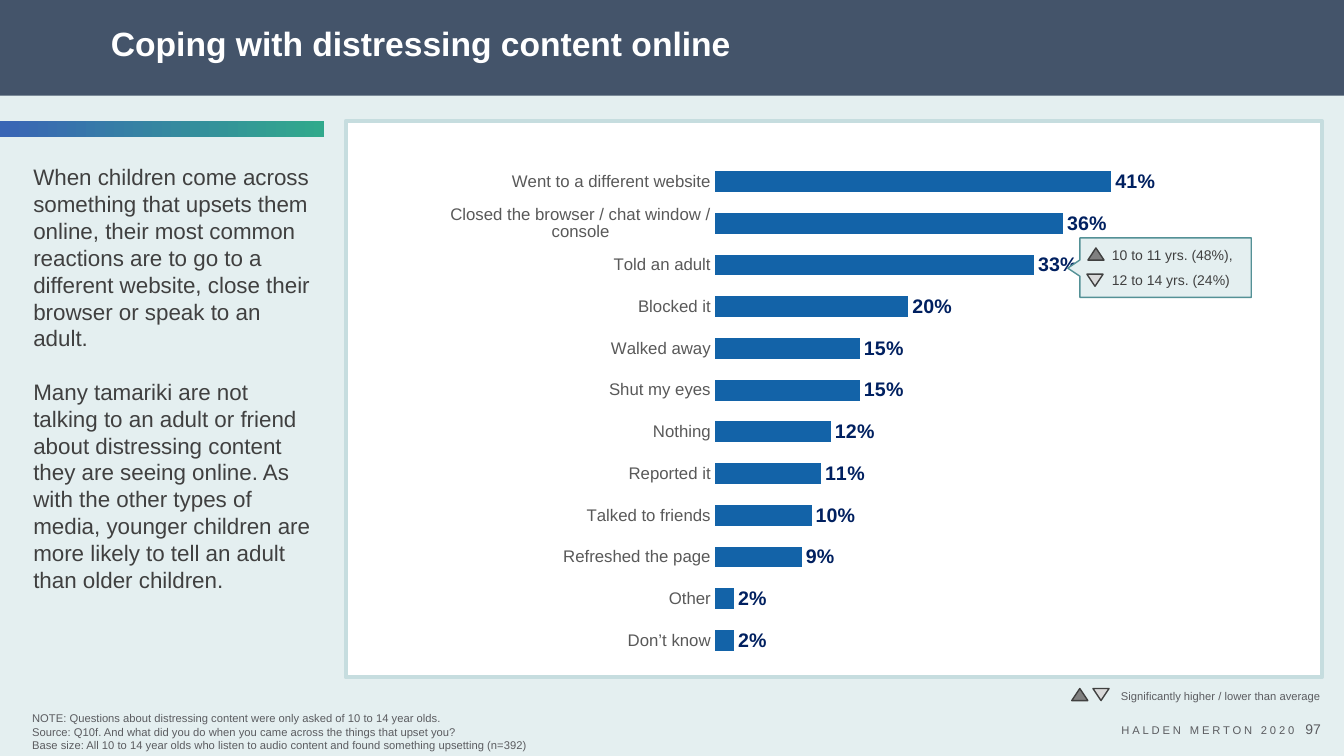
import dataclasses

import lxml.etree
import pptx
import pptx.chart.data
import pptx.dml.color
import pptx.enum.chart
import pptx.enum.shapes
import pptx.enum.text
import pptx.oxml
import pptx.oxml.ns
import pptx.util

Inches = pptx.util.Inches
Pt = pptx.util.Pt
Align = pptx.enum.text.PP_ALIGN
Anchor = pptx.enum.text.MSO_ANCHOR
Shape = pptx.enum.shapes.MSO_SHAPE
qn = pptx.oxml.ns.qn


@dataclasses.dataclass(frozen=True)
class Theme:
    """Colours, font and type sizes of the slide."""
    face: str = "Arial"
    white: str = "FFFFFF"
    black: str = "000000"
    pale: str = "E4EFF0"
    band: str = "44546A"
    frame: str = "C6DDDF"
    edge: str = "549196"
    start: str = "3965B5"
    end: str = "31A98C"
    bar: str = "1363A8"
    value: str = "002060"
    label: str = "595959"
    text: str = "404040"
    note: str = "5B5C60"
    higher: str = "808080"
    lower: str = "D9D9D9"
    head: int = 24
    body: int = 16
    mark: int = 14
    axis: int = 12
    small: int = 10
    tiny: int = 8


THEME = Theme()

BODY = [
    "When children come across something that upsets them online, their most common reactions "
    "are to go to a different website, close their browser or speak to an adult.",
    "Many tamariki are not talking to an adult or friend about distressing content they are "
    "seeing online. As with the other types of media, younger children are more likely to tell "
    "an adult than older children.",
]
NOTES = [
    "NOTE: Questions about distressing content were only asked of 10 to 14 year olds.",
    "Source: Q10f. And what did you do when you came across the things that upset you?",
    "Base size: All 10 to 14 year olds who listen to audio content and found something "
    "upsetting (n=392)",
]
SHARES = {
    "Went to a different website": 0.41,
    "Closed the browser / chat window / console": 0.36,
    "Told an adult": 0.33,
    "Blocked it": 0.2,
    "Walked away": 0.15,
    "Shut my eyes": 0.15,
    "Nothing": 0.12,
    "Reported it": 0.11,
    "Talked to friends": 0.1,
    "Refreshed the page": 0.09,
    "Other": 0.02,
    "Don’t know": 0.02,
}
PLOT = {"x": 0.355, "y": 0.038, "w": 0.501, "h": 0.925}


def rgb(code):
    """Turn a hex code into a colour."""
    return pptx.dml.color.RGBColor.from_string(code)


def style(font, size, color, bold=False):
    """Set the face, size, colour and weight of a font."""
    font.name, font.size, font.bold = THEME.face, Pt(size), bold
    font.color.rgb = rgb(color)


def place(shape, box):
    """Move and size a shape."""
    shape.left, shape.top, shape.width, shape.height = map(Inches, box)


def paint(shape, fill, line=None, width=1):
    """Give a shape a plain fill and an optional outline."""
    shape.shadow.inherit = False
    shape.fill.solid()
    shape.fill.fore_color.rgb = rgb(fill)
    if line:
        shape.line.color.rgb = rgb(line)
        shape.line.width = Pt(width)
    else:
        shape.line.fill.background()


def block(slide, box, fill, line=None, width=1, kind=Shape.RECTANGLE):
    """Draw a preset shape."""
    shape = slide.shapes.add_shape(kind, *map(Inches, box))
    paint(shape, fill, line, width)
    return shape


def arrow(slide, left, top, higher):
    """Draw a marker for a result above or below average."""
    fill = THEME.higher if higher else THEME.lower
    shape = block(slide, (left, top, 0.16, 0.12), fill, THEME.text,
                  kind=Shape.ISOSCELES_TRIANGLE)
    shape.rotation = 0 if higher else 180


def write(shape, lines, size, color, bold=False, align=Align.LEFT, anchor=Anchor.MIDDLE,
          space=1.0, before=0, after=0, indent=0):
    """Fill a text frame with paragraphs of one style."""
    frame = shape.text_frame
    frame.word_wrap = True
    frame.auto_size = pptx.enum.text.MSO_AUTO_SIZE.NONE
    frame.vertical_anchor = anchor
    frame.text = "\n".join(lines)
    for i, para in enumerate(frame.paragraphs):
        props = para._p.get_or_add_pPr()
        props.set("marL", str(Inches(indent)))
        props.set("indent", "0")
        lxml.etree.SubElement(props, qn("a:buNone"))
        para.alignment, para.line_spacing = align, space
        para.space_before, para.space_after = Pt(before if i else 0), Pt(after)
        style(para.font, size, color, bold)


def label(slide, box, lines, size, color, **look):
    """Add a text box."""
    shape = slide.shapes.add_textbox(*map(Inches, box))
    write(shape, lines, size, color, **look)
    return shape


def chart(slide, box):
    """Add the bar chart of reactions."""
    data = pptx.chart.data.CategoryChartData(number_format="0%")
    data.categories = list(SHARES)
    data.add_series("Series 1", list(SHARES.values()))
    kind = pptx.enum.chart.XL_CHART_TYPE.BAR_CLUSTERED
    graph = slide.shapes.add_chart(kind, *map(Inches, box), data).chart
    graph.has_legend = graph.has_title = False
    style(graph.font, THEME.small, THEME.black)
    rows, scale = graph.category_axis, graph.value_axis
    rows.reverse_order = True
    rows.major_tick_mark = pptx.enum.chart.XL_TICK_MARK.NONE
    rows.format.line.fill.background()
    style(rows.tick_labels.font, THEME.axis, THEME.label)
    scale.visible = scale.has_major_gridlines = False
    scale.minimum_scale, scale.maximum_scale = 0, 0.45
    plot = graph.plots[0]
    plot.gap_width, plot.vary_by_categories = 100, False
    fill = plot.series[0].format.fill
    fill.solid()
    fill.fore_color.rgb = rgb(THEME.bar)
    plot.has_data_labels = True
    marks = plot.data_labels
    marks.show_value, marks.number_format = True, "0%"
    marks.number_format_is_linked = False
    marks.position = pptx.enum.chart.XL_LABEL_POSITION.OUTSIDE_END
    style(marks.font, THEME.mark, THEME.value, True)
    area = graph.element.find(".//" + qn("c:plotArea"))
    for old in area.findall(qn("c:layout")):
        area.remove(old)
    modes = '<c:layoutTarget val="inner"/><c:xMode val="edge"/><c:yMode val="edge"/>'
    sizes = "".join(f'<c:{key} val="{val}"/>' for key, val in PLOT.items())
    area.insert(0, pptx.oxml.parse_xml(
        f'<c:layout {pptx.oxml.ns.nsdecls("c")}><c:manualLayout>{modes}{sizes}'
        "</c:manualLayout></c:layout>"))


def callout(slide):
    """Add the pointed note on age groups."""
    left, right, top, low = 10.71, 12.41, 2.36, 2.95
    points = [(right, top), (right, low), (left, low), (left, 2.74), (10.59, 2.66), (left, 2.58)]
    pen = slide.shapes.build_freeform(Inches(left), Inches(top))
    pen.add_line_segments([(Inches(x), Inches(y)) for x, y in points], close=True)
    paint(pen.convert_to_shape(), THEME.pale, THEME.edge)
    label(slide, (left, 2.36, 1.71, 0.59), ["10 to 11 yrs. (48%),", "12 to 14 yrs. (24%)"],
          THEME.small, THEME.text, after=6, indent=0.22)
    arrow(slide, 10.78, 2.72, False)
    arrow(slide, 10.79, 2.46, True)


def main():
    """Build and save the slide."""
    deck = pptx.Presentation()
    deck.slide_width, deck.slide_height = Inches(13.33), Inches(7.5)
    slide = deck.slides.add_slide(deck.slide_layouts[1])
    slide.background.fill.solid()
    slide.background.fill.fore_color.rgb = rgb(THEME.pale)
    title, body = slide.shapes.title, slide.placeholders[1]
    band = block(slide, (0, 0, 13.33, 0.95), THEME.band)
    title.element.addprevious(band.element)
    place(title, (1, 0.15, 10.09, 0.6))
    write(title, ["Coping with distressing content online"], THEME.head, THEME.white,
          bold=True, space=0.9)
    place(body, (0.19, 1.57, 3.06, 4.51))
    write(body, BODY, THEME.body, THEME.text, anchor=Anchor.TOP, before=19, indent=0.04)
    block(slide, (3.43, 1.2, 9.68, 5.52), THEME.white, THEME.frame, 3)
    strip = block(slide, (0, 1.2, 3.21, 0.16), THEME.start)
    strip.fill.gradient()
    strip.fill.gradient_angle = 0
    for stop, code in zip(strip.fill.gradient_stops, (THEME.start, THEME.end)):
        stop.color.rgb = rgb(code)
    chart(slide, (4.03, 1.39, 8.62, 5.37))
    callout(slide)
    arrow(slide, 10.63, 6.83, True)
    arrow(slide, 10.84, 6.83, False)
    label(slide, (11.02, 6.66, 2.3, 0.48), ["Significantly higher / lower than average"],
          THEME.tiny, THEME.note)
    label(slide, (0.22, 7.02, 8.29, 0.48), NOTES, THEME.tiny, THEME.note)
    credit = label(slide, (10.7, 7.05, 2.24, 0.39), ["HALDEN MERTON 2020"], THEME.tiny,
                   THEME.note, align=Align.RIGHT)
    credit.text_frame.paragraphs[0].runs[0].font._element.set("spc", "200")
    label(slide, (12.74, 7.1, 0.46, 0.27), ["97"], THEME.small, THEME.note,
          align=Align.RIGHT, anchor=Anchor.TOP)
    deck.save("out.pptx")


if __name__ == "__main__":
    main()
